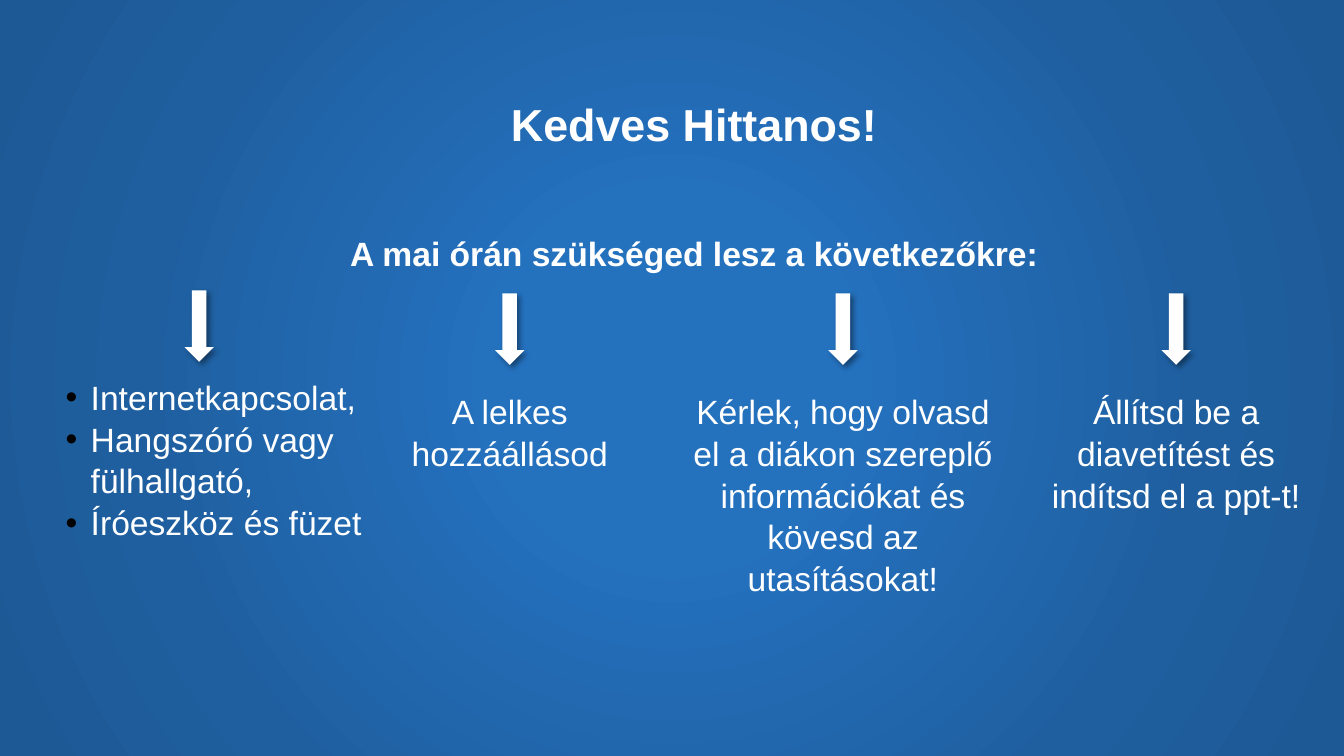
from lxml import etree
from pptx import Presentation
from pptx.dml.color import RGBColor
from pptx.enum.shapes import MSO_SHAPE
from pptx.enum.text import MSO_ANCHOR, PP_ALIGN
from pptx.oxml.ns import qn
from pptx.util import Inches, Pt
from dataclasses import dataclass

ARROW = MSO_SHAPE.DOWN_ARROW
TOP = MSO_ANCHOR.TOP
LEFT, CENTER = PP_ALIGN.LEFT, PP_ALIGN.CENTER


@dataclass(frozen=True)
class Theme:
    font: str = "Arial"
    white: str = "FFFFFF"
    black: str = "000000"
    glow: tuple = ((0, "2471BE"), (23, "2471BE"), (69, "1F5FA0"), (97, "1D5995"))
    title: int = 32
    body: int = 24
    pitch: float = 1.04


def node(parent, tag, **attrs):
    return etree.SubElement(parent, qn(tag), {k: str(v) for k, v in attrs.items()})


class Deck:
    def __init__(self, theme):
        self.theme = theme
        self.prs = Presentation()
        self.prs.slide_width = Inches(13.33)
        self.prs.slide_height = Inches(7.5)
        self.slide = self.prs.slides.add_slide(self.prs.slide_layouts[6])

    def backdrop(self):
        fill = self.slide.background.fill
        fill.gradient()
        grad = next(self.slide.element.iter(qn("a:gradFill")))
        for child in list(grad):
            grad.remove(child)
        stops = node(grad, "a:gsLst")
        for pos, color in self.theme.glow:
            stop = node(stops, "a:gs", pos=pos * 1000)
            node(stop, "a:srgbClr", val=color)
        ring = node(grad, "a:path", path="circle")
        node(ring, "a:fillToRect", l=50000, t=50000, r=50000, b=50000)

    def text(self, box, lines, size, bold=False, bullet=False):
        shape = self.slide.shapes.add_textbox(*map(Inches, box))
        frame = shape.text_frame
        frame.word_wrap = True
        frame.vertical_anchor = TOP
        frame.margin_left = frame.margin_right = 0
        frame.margin_top = frame.margin_bottom = 0
        for i, line in enumerate(lines):
            para = frame.add_paragraph() if i else frame.paragraphs[0]
            para.alignment = LEFT if bullet else CENTER
            para.line_spacing = self.theme.pitch
            if bullet:
                self.bullet(para)
            run = para.add_run()
            run.text = line
            run.font.name = self.theme.font
            run.font.size = Pt(size)
            run.font.bold = bold
            run.font.color.rgb = RGBColor.from_string(self.theme.white)

    def bullet(self, para):
        props = para._p.get_or_add_pPr()
        props.set("marL", str(Inches(0.25)))
        props.set("indent", str(-Inches(0.25)))
        color = node(props, "a:buClr")
        node(color, "a:srgbClr", val=self.theme.black)
        node(props, "a:buFont", typeface=self.theme.font)
        node(props, "a:buChar", char="•")

    def arrow(self, left, top):
        shape = self.slide.shapes.add_shape(
            ARROW, Inches(left), Inches(top), Inches(0.29), Inches(0.71))
        shape.fill.solid()
        shape.fill.fore_color.rgb = RGBColor.from_string(self.theme.white)
        shape.line.fill.background()
        shape.shadow.inherit = False
        effects = shape._element.spPr.find(qn("a:effectLst"))
        shade = node(effects, "a:outerShdw", blurRad=Pt(4), dist=Pt(3),
                     dir=45 * 60000, algn="tl", rotWithShape=0)
        color = node(shade, "a:srgbClr", val=self.theme.black)
        node(color, "a:alpha", val=40000)


def main():
    theme = Theme()
    deck = Deck(theme)
    deck.backdrop()
    deck.text((1.83, 0.94, 10.11, 0.71), ["Kedves Hittanos!"], theme.title, bold=True)
    deck.text((3.33, 2.29, 7.11, 0.4),
              ["A mai órán szükséged lesz a következőkre:"], theme.body, bold=True)
    deck.text((0.65, 3.72, 3.18, 1.71),
              ["Internetkapcsolat,", "Hangszóró vagy fülhallgató,", "Íróeszköz és füzet"],
              theme.body, bullet=True)
    columns = (
        (3.7, 2.71, 1.25, "A lelkes hozzáállásod"),
        (6.77, 3.18, 3.27,
         "Kérlek, hogy olvasd el a diákon szereplő információkat és kövesd az utasításokat!"),
        (10.31, 2.71, 1.25, "Állítsd be a diavetítést és indítsd el a ppt-t!"),
    )
    deck.arrow(1.83, 2.88)
    for left, width, height, words in columns:
        deck.text((left, 3.86, width, height), [words], theme.body)
        deck.arrow(left + (width - 0.29) / 2, 2.91)
    deck.prs.save("out.pptx")


if __name__ == "__main__":
    main()
